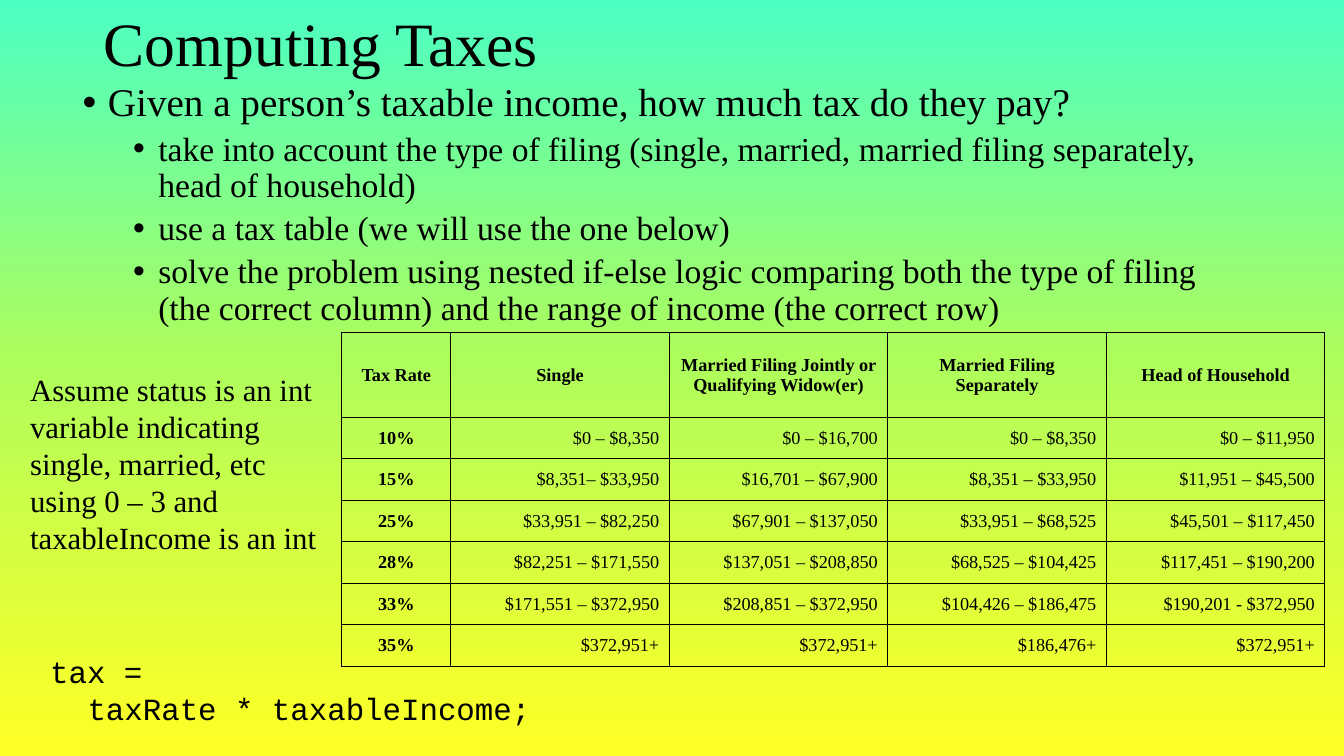
import copy
from dataclasses import dataclass

import pptx
import pptx.dml.color
import pptx.enum.text
import pptx.oxml
import pptx.oxml.ns
import pptx.util
from pptx.util import Inches

ALIGN = pptx.enum.text.PP_ALIGN
ANCHOR = pptx.enum.text.MSO_ANCHOR
AUTO_SIZE = pptx.enum.text.MSO_AUTO_SIZE


@dataclass(frozen=True)
class Theme:
    serif: str = "Times New Roman"
    mono: str = "Courier New"
    ink: str = "000000"
    backdrop: tuple = ((0, "4BFFC3"), (0.47, "ADFD5D"), (1, "FFFF25"))
    title: int = 44
    bullets: tuple = (28, 24)
    note: int = 22
    table: int = 13
    border: float = 1


THEME = Theme()

TITLE = "Computing Taxes"
BULLETS = [
    (0, "Given a person’s taxable income, how much tax do they pay?"),
    (1, "take into account the type of filing (single, married, "
        "married filing separately, head of household)"),
    (1, "use a tax table (we will use the one below)"),
    (1, "solve the problem using nested if-else logic comparing both the type of filing "
        "(the correct column) and the range of income (the correct row)"),
]
TAX_TABLE = [
    ("Tax Rate", "Single", "Married Filing Jointly or Qualifying Widow(er)",
     "Married Filing Separately", "Head of Household"),
    ("10%", "$0 – $8,350", "$0 – $16,700", "$0 – $8,350", "$0 – $11,950"),
    ("15%", "$8,351– $33,950", "$16,701 – $67,900", "$8,351 – $33,950", "$11,951 – $45,500"),
    ("25%", "$33,951 – $82,250", "$67,901 – $137,050", "$33,951 – $68,525",
     "$45,501 – $117,450"),
    ("28%", "$82,251 – $171,550", "$137,051 – $208,850", "$68,525 – $104,425",
     "$117,451 – $190,200"),
    ("33%", "$171,551 – $372,950", "$208,851 – $372,950", "$104,426 – $186,475",
     "$190,201 - $372,950"),
    ("35%", "$372,951+", "$372,951+", "$186,476+", "$372,951+"),
]
ASSUMPTION = ("Assume status is an int variable indicating single, married, etc "
              "using 0 – 3 and taxableIncome is an int")
CODE = [("tax =", 0), ("taxRate * taxableIncome;", 0.37)]


def rgb(value):
    return pptx.dml.color.RGBColor.from_string(value)


def style(para, size, font=THEME.serif, bold=False):
    para.font.name = font
    para.font.size = pptx.util.Pt(size)
    para.font.bold = bold
    para.font.color.rgb = rgb(THEME.ink)


def place(shape, box):
    shape.left, shape.top, shape.width, shape.height = map(Inches, box)


def indent(para, left, first=0):
    props = para._p.get_or_add_pPr()
    props.set("marL", str(Inches(left)))
    props.set("indent", str(Inches(first)))
    return props


def paint_backdrop(page):
    fill = page.background.fill
    fill.gradient()
    fill.gradient_angle = 270
    stop_list = page.element.xpath(".//a:gsLst")[0]
    stop_list.append(copy.deepcopy(stop_list[-1]))
    for stop, (position, colour) in zip(fill.gradient_stops, THEME.backdrop):
        stop.position = position
        stop.color.rgb = rgb(colour)


def fill_title(holder, box):
    place(holder, box)
    frame = holder.text_frame
    frame.text = TITLE
    frame.auto_size = AUTO_SIZE.NONE
    frame.vertical_anchor = ANCHOR.MIDDLE
    para = frame.paragraphs[0]
    para.alignment = ALIGN.LEFT
    para.line_spacing = 0.9
    style(para, THEME.title)


def fill_bullets(holder, box):
    place(holder, box)
    frame = holder.text_frame
    frame.text = "\n".join(text for _, text in BULLETS)
    frame.auto_size = AUTO_SIZE.NONE
    for para, (level, _) in zip(frame.paragraphs, BULLETS):
        para.level = level
        para.line_spacing = 0.9
        para.space_before = pptx.util.Pt(5 if level else 10)
        style(para, THEME.bullets[level])
        bullet = pptx.oxml.parse_xml(
            f'<a:buChar {pptx.oxml.ns.nsdecls("a")} char="•"/>')
        props = indent(para, 0.25 + 0.5 * level, -0.25)
        props.insert_element_before(bullet, "a:tabLst", "a:defRPr", "a:extLst")


def outline_cell(cell):
    props = cell._tc.get_or_add_tcPr()
    for side in "LRTB":
        props.append(pptx.oxml.parse_xml(
            f'<a:ln{side} {pptx.oxml.ns.nsdecls("a")} w="{pptx.util.Pt(THEME.border)}">'
            f'<a:solidFill><a:srgbClr val="{THEME.ink}"/></a:solidFill></a:ln{side}>'))


def add_tax_table(page, box):
    """Fill the box: narrow rate column, equal filing columns, tall header row."""
    width, height = box[2:]
    rate_width, header_height = 1.08, 0.84
    rows, columns = len(TAX_TABLE), len(TAX_TABLE[0])
    table = page.shapes.add_table(rows, columns, *map(Inches, box)).table
    table.first_row = table.horz_banding = False
    for index, column in enumerate(table.columns):
        column.width = Inches((width - rate_width) / (columns - 1) if index else rate_width)
    for index, row in enumerate(table.rows):
        row.height = Inches((height - header_height) / (rows - 1) if index else header_height)
    for r, texts in enumerate(TAX_TABLE):
        for c, text in enumerate(texts):
            cell = table.cell(r, c)
            heading = r == 0 or c == 0
            cell.text = text
            cell.vertical_anchor = ANCHOR.MIDDLE
            outline_cell(cell)
            cell.fill.background()
            para = cell.text_frame.paragraphs[0]
            para.alignment = ALIGN.CENTER if heading else ALIGN.RIGHT
            style(para, THEME.table, bold=heading)


def add_note(page, box, lines, font, wrap):
    """Add a text box of (text, left indent) lines."""
    frame = page.shapes.add_textbox(*map(Inches, box)).text_frame
    frame.text = "\n".join(text for text, _ in lines)
    frame.word_wrap = wrap
    frame.auto_size = AUTO_SIZE.SHAPE_TO_FIT_TEXT
    for para, (_, left) in zip(frame.paragraphs, lines):
        indent(para, left)
        style(para, THEME.note, font)


def build_tax_slide(deck):
    page = deck.slides.add_slide(deck.slide_layouts[1])
    paint_backdrop(page)
    fill_title(page.shapes.title, (0.93, -0.26, 11.5, 1.45))
    fill_bullets(page.placeholders[1], (0.72, 0.77, 11.5, 2.71))
    add_tax_table(page, (3.39, 3.3, 9.75, 3.31))
    add_note(page, (0.4, 6.43, 5.03, 0.84), CODE, THEME.mono, wrap=False)
    add_note(page, (0.2, 3.63, 3.18, 1.95), [(ASSUMPTION, 0)], THEME.serif, wrap=True)


def main():
    deck = pptx.Presentation()
    deck.slide_width, deck.slide_height = Inches(13.33), Inches(7.5)
    build_tax_slide(deck)
    deck.save("out.pptx")


if __name__ == "__main__":
    main()
